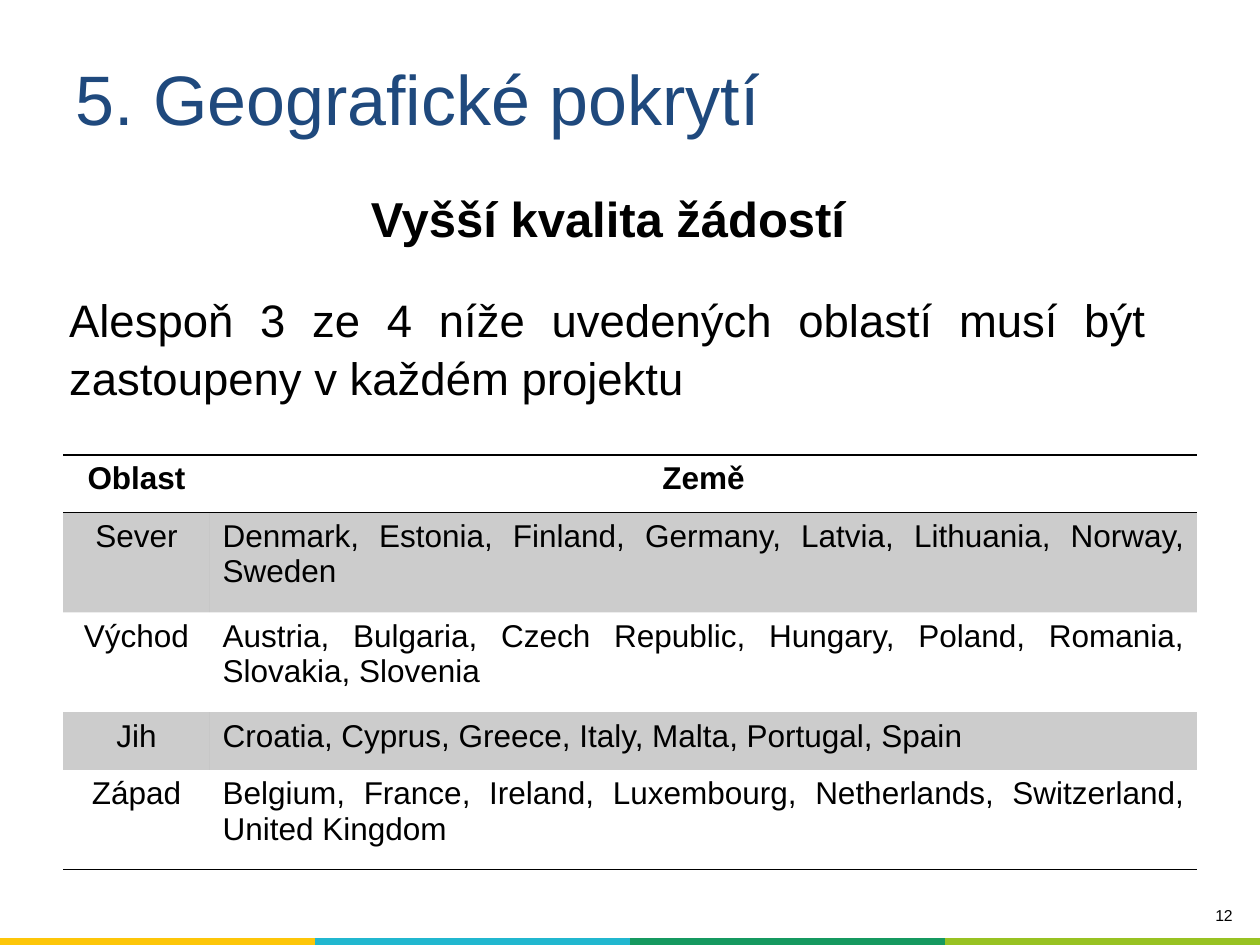
"""Build the slide on geographic coverage with its table of regions."""
from lxml import etree
from pptx import Presentation
from pptx.dml.color import RGBColor
from pptx.enum.text import MSO_ANCHOR, PP_ALIGN
from pptx.oxml.ns import qn
from pptx.util import Pt

LEFT, MID, RIGHT, JUST = PP_ALIGN.LEFT, PP_ALIGN.CENTER, PP_ALIGN.RIGHT, PP_ALIGN.JUSTIFY
CENTRE = MSO_ANCHOR.MIDDLE
BLACK = RGBColor(0x00, 0x00, 0x00)
NAVY = RGBColor(0x1F, 0x49, 0x7D)
YELLOW = RGBColor(0xFD, 0xC6, 0x09)
CYAN = RGBColor(0x21, 0xB7, 0xCF)
GREEN = RGBColor(0x15, 0x99, 0x60)
LIME = RGBColor(0x98, 0xC2, 0x22)
PLAIN = "{2D5ABB26-0587-4C30-8999-92F81FD0307C}"


def write(para, text, size, align, color=BLACK, bold=False):
    para.alignment = align
    run = para.add_run()
    run.text = text
    run.font.name = "Arial"
    run.font.size = Pt(size)
    run.font.bold = bold
    run.font.color.rgb = color


def add_grid(rows, cols, left, top, width, height):
    frame = slide.shapes.add_table(rows, cols, Pt(left), Pt(top), Pt(width), Pt(height))
    grid = frame.table
    grid.first_row = grid.horz_banding = False
    frame._element.find(".//" + qn("a:tableStyleId")).text = PLAIN
    return grid


deck = Presentation()
deck.slide_width, deck.slide_height = Pt(720), Pt(540)
slide = deck.slides.add_slide(deck.slide_layouts[6])

strip = add_grid(1, 4, 0, 536, 720, 12)
for cell, color in zip(strip.rows[0].cells, (YELLOW, CYAN, GREEN, LIME)):
    cell.fill.solid()
    cell.fill.fore_color.rgb = color

frames = []
for left, top, width, height in (
    (569.5, 514, 142, 22),
    (36, 34, 648, 44),
    (32.4, 104.4, 630, 129.6),
):
    box = slide.shapes.add_textbox(Pt(left), Pt(top), Pt(width), Pt(height))
    box.text_frame.word_wrap = True
    frames.append(box.text_frame)
number, title, body = frames

write(number.paragraphs[0], "12", 9, RIGHT)
title.vertical_anchor = CENTRE
write(title.paragraphs[0], "5. Geografické pokrytí", 40, LEFT, NAVY)

head = body.paragraphs[0]
head.space_after = Pt(12)
write(head, "Vyšší kvalita žádostí", 28, MID, bold=True)
rule = body.add_paragraph()
rule.space_before = rule.space_after = Pt(12)
rule.line_spacing = 1.05
write(rule, "Alespoň 3 ze 4 níže uvedených oblastí musí být zastoupeny v každém projektu", 26, JUST)

REGIONS = (
    ("Oblast", "Země", 33),
    ("Sever", "Denmark, Estonia, Finland, Germany, Latvia, Lithuania, Norway, Sweden", 57),
    ("Východ", "Austria, Bulgaria, Czech Republic, Hungary, Poland, Romania, Slovakia, Slovenia", 57),
    ("Jih", "Croatia, Cyprus, Greece, Italy, Malta, Portugal, Spain", 33),
    ("Západ", "Belgium, France, Ireland, Luxembourg, Netherlands, Switzerland, United Kingdom", 57),
)
EDGES = {0: ("a:lnT", "a:lnB"), 4: ("a:lnB",)}
grid = add_grid(5, 2, 36, 260, 648, 237)
grid.columns[0].width, grid.columns[1].width = Pt(84), Pt(564)
for row, (area, lands, height) in enumerate(REGIONS):
    grid.rows[row].height = Pt(height)
    for col, text in enumerate((area, lands)):
        cell = grid.cell(row, col)
        align = JUST if row and col else MID
        write(cell.text_frame.paragraphs[0], text, 18, align, bold=row == 0)
        props = cell._tc.get_or_add_tcPr()
        for edge in EDGES.get(row, ()):
            line = etree.SubElement(props, qn(edge), w=str(Pt(1)))
            fill = etree.SubElement(line, qn("a:solidFill"))
            etree.SubElement(fill, qn("a:srgbClr"), val=str(BLACK))
        if row % 2:
            cell.fill.solid()
            cell.fill.fore_color.rgb = BLACK
            tint = props.find(".//" + qn("a:srgbClr"))
            etree.SubElement(tint, qn("a:alpha"), val="20000")
        else:
            cell.fill.background()

deck.save("out.pptx")
